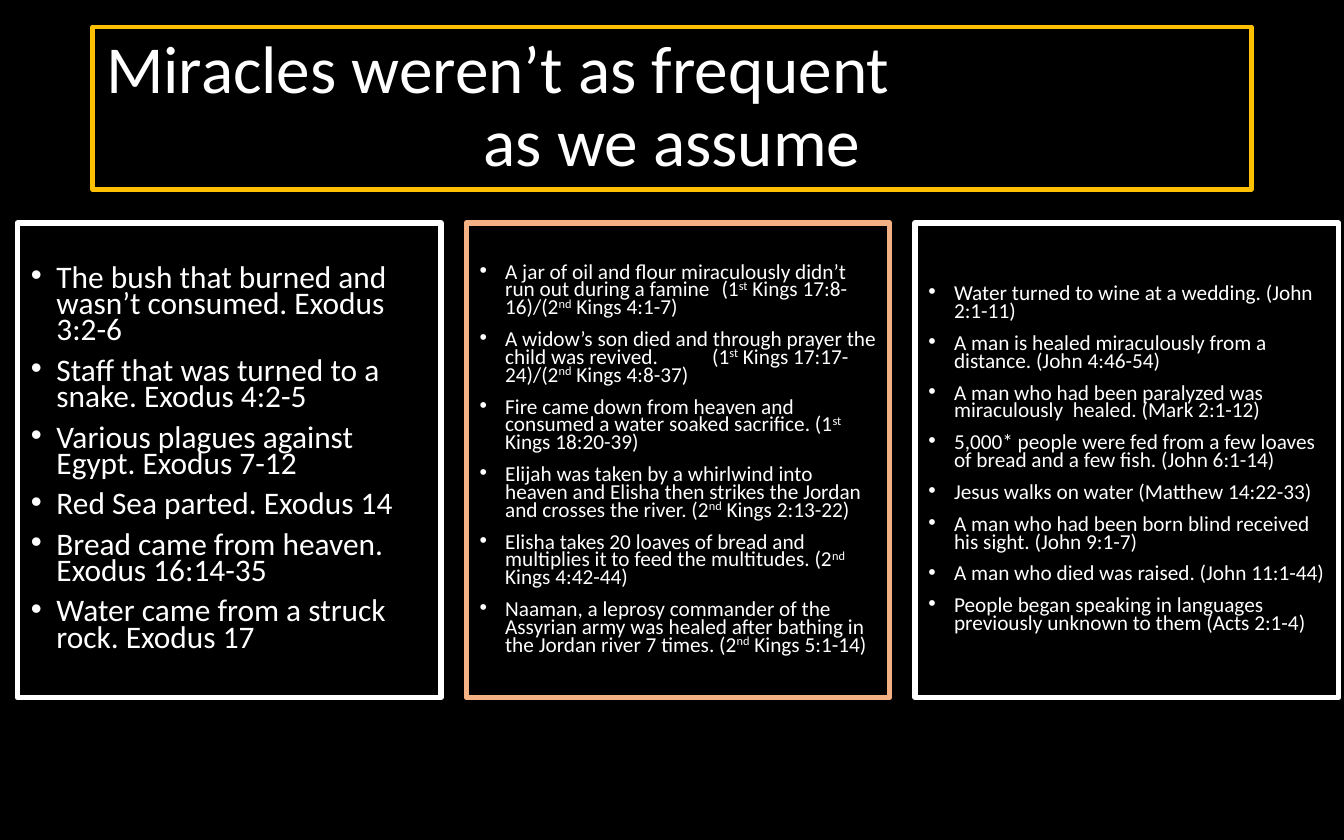
from lxml import etree
from pptx import Presentation
from pptx.dml.color import RGBColor
from pptx.enum.text import MSO_ANCHOR, MSO_AUTO_SIZE, PP_ALIGN
from pptx.oxml.ns import qn
from pptx.util import Inches, Pt

LEFT, CENTER = PP_ALIGN.LEFT, PP_ALIGN.CENTER
MIDDLE = MSO_ANCHOR.MIDDLE
NO_FIT = MSO_AUTO_SIZE.NONE

FONT = "Calibri"
BLACK, WHITE, GOLD, PEACH = "000000", "FFFFFF", "FFC000", "F4B183"

TITLE = [("Miracles weren’t as frequent", LEFT), ("as we assume", CENTER)]

COLUMNS = [
    {"size": 16.8, "border": WHITE, "items": [
        "The bush that burned and wasn’t consumed. Exodus 3:2-6",
        "Staff that was turned to a snake. Exodus 4:2-5",
        "Various plagues against Egypt. Exodus 7-12",
        "Red Sea parted. Exodus 14",
        "Bread came from heaven. Exodus 16:14-35",
        "Water came from a struck rock. Exodus 17",
    ]},
    {"size": 11.4, "border": PEACH, "tabs": {0: 1.8, 1: 1.73}, "items": [
        "A jar of oil and flour miraculously didn’t run out during a famine\t"
        "(1^st^ Kings 17:8-16)/(2^nd^ Kings 4:1-7)",
        "A widow’s son died and through prayer the child was revived.\t"
        "(1^st^ Kings 17:17-24)/(2^nd^ Kings 4:8-37)",
        "Fire came down from heaven and consumed a water soaked sacrifice. "
        "(1^st^ Kings 18:20-39)",
        "Elijah was taken by a whirlwind into heaven and Elisha then strikes "
        "the Jordan and crosses the river. (2^nd^ Kings 2:13-22)",
        "Elisha takes 20 loaves of bread and multiplies it to feed the "
        "multitudes. (2^nd^ Kings 4:42-44)",
        "Naaman, a leprosy commander of the Assyrian army was healed after "
        "bathing in the Jordan river 7 times. (2^nd^ Kings 5:1-14)",
    ]},
    {"size": 11.4, "border": WHITE, "items": [
        "Water turned to wine at a wedding. (John 2:1-11)",
        "A man is healed miraculously from a distance. (John 4:46-54)",
        "A man who had been paralyzed was miraculously  healed. (Mark 2:1-12)",
        "5,000* people were fed from a few loaves of bread and a few fish. "
        "(John 6:1-14)",
        "Jesus walks on water (Matthew 14:22-33)",
        "A man who had been born blind received his sight. (John 9:1-7)",
        "A man who died was raised. (John 11:1-44)",
        "People began speaking in languages previously unknown to them "
        "(Acts 2:1-4)",
    ]},
]

COLUMN_LEFT, COLUMN_TOP, COLUMN_STEP = 0.13, 1.66, 3.34
COLUMN_WIDTH, COLUMN_HEIGHT = 3.15, 3.53
INDENT = 0.19


def color(value):
    """Turn a hex string into a colour."""
    return RGBColor.from_string(value)


def frame_box(shape, left, top, width, height, border, weight):
    """Place and outline a box, and return its empty text frame."""
    shape.left, shape.top = Inches(left), Inches(top)
    shape.width, shape.height = Inches(width), Inches(height)
    shape.line.color.rgb = color(border)
    shape.line.width = Pt(weight)
    frame = shape.text_frame
    frame.word_wrap = True
    frame.auto_size = NO_FIT
    frame.vertical_anchor = MIDDLE
    return frame


def write(paragraph, text, size, align=LEFT, spacing=0.9, before=0):
    """Write text into a paragraph, raising the parts between carets."""
    paragraph.alignment = align
    paragraph.line_spacing = spacing
    paragraph.space_before = Pt(before)
    for index, part in enumerate(text.split("^")):
        run = paragraph.add_run()
        run.text = part
        run.font.name = FONT
        run.font.size = Pt(size)
        run.font.bold = False
        run.font.color.rgb = color(WHITE)
        if index % 2:
            run.font._element.set("baseline", "30000")


def add_bullet(paragraph, tab=None):
    """Give a paragraph a hanging bullet and an optional tab stop."""
    properties = paragraph._p.get_or_add_pPr()
    properties.set("marL", str(Inches(INDENT)))
    properties.set("indent", str(-Inches(INDENT)))
    etree.SubElement(properties, qn("a:buFont")).set("typeface", "Arial")
    etree.SubElement(properties, qn("a:buChar")).set("char", "•")
    if tab:
        stops = etree.SubElement(properties, qn("a:tabLst"))
        stop = etree.SubElement(stops, qn("a:tab"))
        stop.set("pos", str(Inches(tab)))
        stop.set("algn", "l")


def paragraphs(frame, count):
    """Return the given number of paragraphs of an empty frame."""
    return [frame.paragraphs[0]] + [frame.add_paragraph() for _ in range(count - 1)]


def main():
    """Build the slide and save it."""
    presentation = Presentation()
    presentation.slide_width, presentation.slide_height = Inches(10), Inches(6.25)
    slide = presentation.slides.add_slide(presentation.slide_layouts[1])
    slide.background.fill.solid()
    slide.background.fill.fore_color.rgb = color(BLACK)

    frame = frame_box(slide.shapes.title, 0.69, 0.2, 8.62, 1.21, GOLD, 2.5)
    for paragraph, (text, align) in zip(paragraphs(frame, len(TITLE)), TITLE):
        write(paragraph, text, 36, align=align)

    for index, column in enumerate(COLUMNS):
        if index == 0:
            shape = slide.placeholders[1]
        else:
            shape = slide.shapes.add_textbox(0, 0, 0, 0)
        left = COLUMN_LEFT + index * COLUMN_STEP
        frame = frame_box(shape, left, COLUMN_TOP, COLUMN_WIDTH, COLUMN_HEIGHT,
                          column["border"], 3)
        items = column["items"]
        tabs = column.get("tabs", {})
        for row, paragraph in enumerate(paragraphs(frame, len(items))):
            write(paragraph, items[row], column["size"], spacing=0.7, before=7.5)
            add_bullet(paragraph, tab=tabs.get(row))

    presentation.save("out.pptx")


if __name__ == "__main__":
    main()
